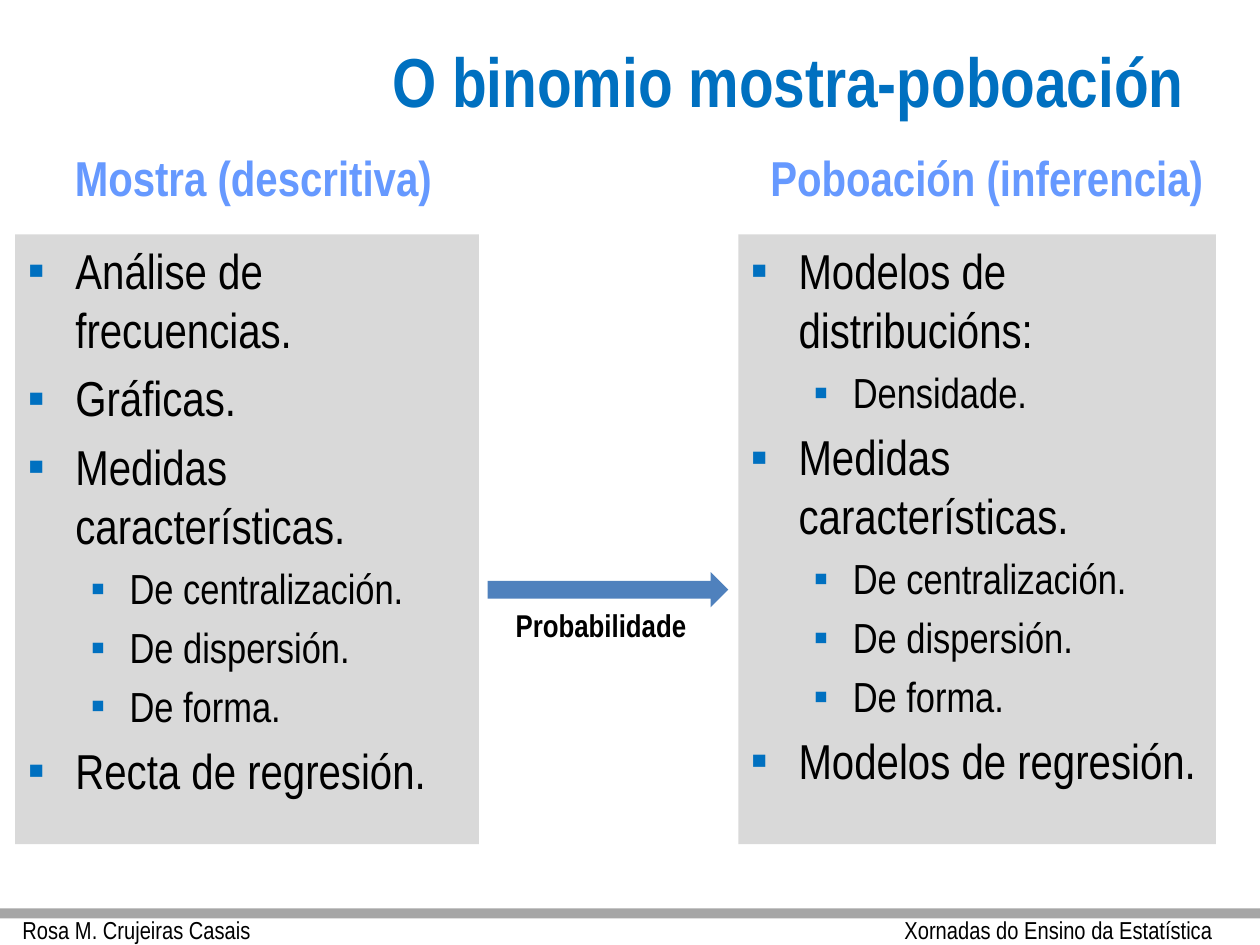
from pptx import Presentation
from pptx.dml.color import RGBColor
from pptx.enum.shapes import MSO_SHAPE as Shape
from pptx.enum.text import MSO_ANCHOR as Anchor, PP_ALIGN as Align
from pptx.util import Emu, Pt
from pptx.oxml.ns import qn
from lxml.etree import SubElement as Sub

COLS, ROWS = 100, 75
FONT, BLUE, BLACK = "Arial Narrow", "0070C0", "000000"

deck = Presentation()
deck.slide_width, deck.slide_height = Emu(9144000), Emu(6858000)
slide = deck.slides.add_slide(deck.slide_layouts[6])
col, row = deck.slide_width / COLS, deck.slide_height / ROWS


def block(left, top, wide, high, fill=None, kind=Shape.RECTANGLE):
    """Add a filled shape, or a text box if there is no fill; lengths in columns and rows."""
    place = [Emu(round(n)) for n in (left * col, top * row, wide * col, high * row)]
    if fill:
        item = slide.shapes.add_shape(kind, *place)
        item.shadow.inherit = False
        item.fill.solid()
        item.fill.fore_color.rgb = RGBColor.from_string(fill)
        item.line.fill.background()
    else:
        item = slide.shapes.add_textbox(*place)
    item.text_frame.word_wrap = True
    item.text_frame.vertical_anchor = Anchor.TOP
    return item.text_frame


def write(para, text, size, color=BLACK, bold=False, align=Align.LEFT):
    para.text, para.alignment = text, align
    font = para.font
    font.name, font.size, font.bold = FONT, Pt(size), bold
    font.color.rgb = RGBColor.from_string(color)


# Title
title = block(5, 3, 90, 12.5)
title.margin_top = 0
write(title.paragraphs[0], "O binomio mostra-poboación", 39.6, BLUE, True, Align.RIGHT)

# Two headed panels: each item is (level, text)
measures = [(0, "Medidas características."), (1, "De centralización."),
            (1, "De dispersión."), (1, "De forma.")]
sample = [(0, "Análise de frecuencias."), (0, "Gráficas."),
          *measures, (0, "Recta de regresión.")]
people = [(0, "Modelos de distribucións:"), (1, "Densidade."),
          *measures, (0, "Modelos de regresión.")]
levels = [(28, 3.8, -3.8), (24, 8.1, -3.1)]  # size, indent, hang

for head, x, left, wide, items in [
    ("Poboación (inferencia)", 56.2, 58.6, 37.9, people),
    ("Mostra (descritiva)", -2, 1.2, 36.8, sample),
]:
    top = block(x, 9.9, 44.2, 7)
    top.vertical_anchor = Anchor.BOTTOM
    write(top.paragraphs[0], head, 28, "6699FF", True, Align.CENTER)

    panel = block(left, 18.6, wide, 48.4, "D9D9D9")
    for i, (level, text) in enumerate(items):
        para = panel.add_paragraph() if i else panel.paragraphs[0]
        size, indent, hang = levels[level]
        write(para, text, size)
        para.level = level
        para.space_before = Pt(size * 0.2)
        props = para._p.get_or_add_pPr()
        props.set("marL", str(round(indent * col)))
        props.set("indent", str(round(hang * col)))
        tint = Sub(props, qn("a:buClr"))
        Sub(tint, qn("a:srgbClr"), val=BLUE)
        Sub(props, qn("a:buFont"), typeface="Arial")
        Sub(props, qn("a:buChar"), char="▪")
        props.append(props.find(qn("a:defRPr")))  # schema order: after the bullet

# Footer: the event starts at a tab stop
block(0, 72.1, COLS, 0.8, "A6A6A6")
foot = block(0.8, 72.1, 98.8, 3.4).paragraphs[0]
write(foot, "Rosa M. Crujeiras Casais\tXornadas do Ensino da Estatística", 14)
props = foot._p.get_or_add_pPr()
stops = Sub(props, qn("a:tabLst"))
Sub(stops, qn("a:tab"), pos=str(round(70 * col)), algn="l")
props.append(props.find(qn("a:defRPr")))

# Arrow from sample to population
block(38.7, 45.4, 19.1, 2.8, "4F81BD", Shape.RIGHT_ARROW)
label = block(39.1, 47.6, 17.2, 4)
write(label.paragraphs[0], "Probabilidade", 18, BLACK, True, Align.CENTER)

deck.save("out.pptx")
